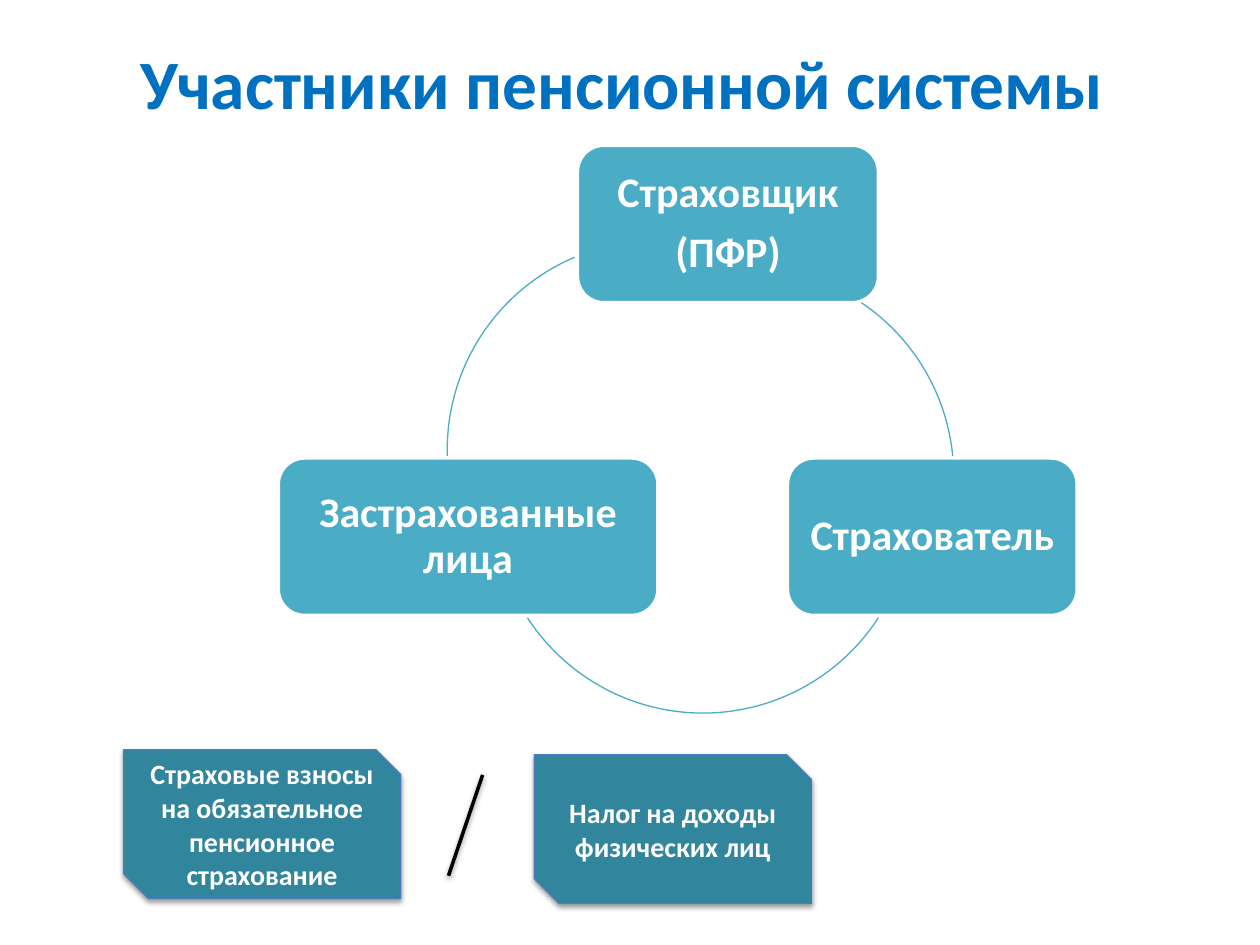
from lxml import etree
from pptx import Presentation
from pptx.dml.color import RGBColor
from pptx.enum.shapes import MSO_CONNECTOR, MSO_SHAPE
from pptx.enum.text import MSO_ANCHOR, PP_ALIGN
from pptx.oxml.ns import qn
from pptx.util import Pt

ROUNDED = MSO_SHAPE.ROUNDED_RECTANGLE
SNIPPED = MSO_SHAPE.SNIP_2_DIAG_RECTANGLE
ARC = MSO_SHAPE.ARC
STRAIGHT = MSO_CONNECTOR.STRAIGHT
MIDDLE = MSO_ANCHOR.MIDDLE
CENTER = PP_ALIGN.CENTER

COLORS = {
    "title": "0070C0",
    "role": "4BACC6",
    "payment": "31859C",
    "payment_edge": "4B7EBC",
    "white": "FFFFFF",
    "black": "000000",
}


def write(shape, lines, size, color):
    frame = shape.text_frame
    frame.word_wrap = True
    frame.vertical_anchor = MIDDLE
    frame.text = "\n".join(lines)
    for paragraph in frame.paragraphs:
        paragraph.alignment = CENTER
        paragraph.font.name = "Calibri"
        paragraph.font.size = Pt(size)
        paragraph.font.bold = True
        paragraph.font.color.rgb = RGBColor.from_string(COLORS[color])


def cast_shadow(shape):
    effects = etree.SubElement(shape._element.spPr, qn("a:effectLst"))
    shadow = etree.SubElement(effects, qn("a:outerShdw"), blurRad=str(Pt(3.1)),
                              dist=str(Pt(1.6)), dir="5400000", rotWithShape="0")
    tint = etree.SubElement(shadow, qn("a:srgbClr"), val=COLORS["black"])
    etree.SubElement(tint, qn("a:alpha"), val="38000")


prs = Presentation()
prs.slide_width, prs.slide_height = Pt(720), Pt(540)
slide = prs.slides.add_slide(prs.slide_layouts[6])
shapes = slide.shapes

title = shapes.add_textbox(Pt(36), Pt(21.6), Pt(648), Pt(49.7))
write(title, ["Участники пенсионной системы "], 39.6, "title")

roles = [
    (330, 83, 172, ["Страховщик", "(ПФР)"]),
    (450, 261.7, 165.6, ["Страхователь"]),
    (159, 261.7, 217, ["Застрахованные лица"]),
]
for left, top, width, lines in roles:
    role = shapes.add_shape(ROUNDED, Pt(left), Pt(top), Pt(width), Pt(90))
    role.shadow.inherit = False
    role.fill.solid()
    role.fill.fore_color.rgb = RGBColor.from_string(COLORS["role"])
    role.line.color.rgb = RGBColor.from_string(COLORS["white"])
    role.line.width = Pt(2)
    write(role, lines, 24, "white")
    frame = role.text_frame
    frame.margin_left = frame.margin_right = Pt(8.5)
    for paragraph in frame.paragraphs:
        paragraph.line_spacing = 0.9
    for paragraph in frame.paragraphs[:-1]:
        paragraph.space_after = Pt(8.4)

links = [
    (306, 152.6, 304, 354.5),
    (282.2, 168.5, 33, 147),
    (255.6, 137.5, 178.3, 247),
]
for left, top, start, end in links:
    link = shapes.add_shape(ARC, Pt(left), Pt(top), Pt(239), Pt(239))
    link.shadow.inherit = False
    link.adjustments[0] = start * 0.6
    link.adjustments[1] = end * 0.6
    link.fill.background()
    link.line.color.rgb = RGBColor.from_string(COLORS["role"])
    link.line.width = Pt(0.75)

payments = [
    (70.6, 428.4, "Страховые взносы на обязательное пенсионное страхование"),
    (305.3, 431.3, "Налог на доходы физических лиц"),
]
for left, top, name in payments:
    payment = shapes.add_shape(SNIPPED, Pt(left), Pt(top), Pt(158.4), Pt(85))
    payment.fill.solid()
    payment.fill.fore_color.rgb = RGBColor.from_string(COLORS["payment"])
    payment.line.color.rgb = RGBColor.from_string(COLORS["payment_edge"])
    payment.line.width = Pt(0.75)
    cast_shadow(payment)
    write(payment, [name], 16, "white")

slash = shapes.add_connector(STRAIGHT, Pt(275.8), Pt(442.8), Pt(256.3), Pt(500.4))
slash.line.color.rgb = RGBColor.from_string(COLORS["black"])
slash.line.width = Pt(2)
cast_shadow(slash)

prs.save("out.pptx")
